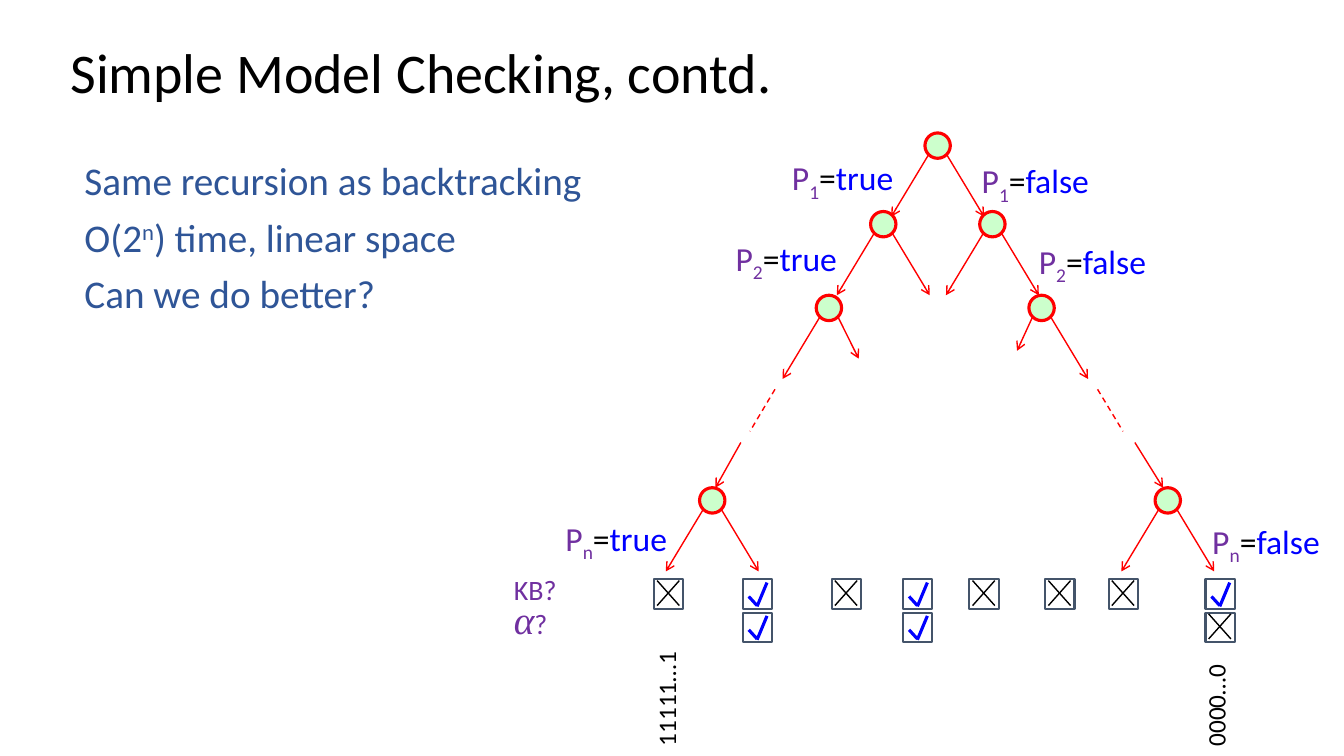
from dataclasses import dataclass

from lxml import etree
from pptx import Presentation
from pptx import util as u
from pptx.dml.color import RGBColor
from pptx.enum import dml, shapes, text
from pptx.oxml import ns


@dataclass(frozen=True)
class Theme:
    """Colours, fonts and type sizes of the slide."""
    black: str = "000000"
    body: str = "2F5597"
    red: str = "FF0000"
    green: str = "CCFFCC"
    violet: str = "7030A0"
    blue: str = "0000FF"
    slate: str = "44546A"
    font: str = "Calibri"
    math: str = "Times New Roman"
    title: int = 40
    large: int = 28
    label: int = 24
    key: int = 20
    code: int = 18


THEME = Theme()


def style(run, size, color, base=0, font=THEME.font):
    """Format one run; base is a baseline shift in percent."""
    run.font.size = u.Pt(size)
    run.font.name = font
    run.font.color.rgb = RGBColor.from_string(color)
    if base:
        run.font._element.set("baseline", str(base * 1000))


def write(para, parts, size):
    """Add runs given as (words, colour, baseline shift)."""
    for words, color, base in parts:
        run = para.add_run()
        run.text = words
        style(run, size, color, base)


def label(parent, box, parts, size):
    """Add a one-line text box that grows with its text."""
    area = parent.shapes.add_textbox(*map(u.Cm, box))
    frame = area.text_frame
    frame.word_wrap = False
    frame.auto_size = text.MSO_AUTO_SIZE.SHAPE_TO_FIT_TEXT
    write(frame.paragraphs[0], parts, size)
    return area


def line(parent, start, end, color, width=1, arrow=False, dash=False):
    """Draw a straight line, with an arrowhead or dashes if wanted."""
    link = parent.shapes.add_connector(
        shapes.MSO_CONNECTOR.STRAIGHT, *map(u.Cm, (*start, *end)))
    link.line.color.rgb = RGBColor.from_string(color)
    link.line.width = u.Pt(width)
    if dash:
        link.line.dash_style = dml.MSO_LINE.DASH
    props = link._element.spPr
    if arrow:
        etree.SubElement(props.find(ns.qn("a:ln")),
                         ns.qn("a:tailEnd")).set("type", "arrow")
    etree.SubElement(props, ns.qn("a:effectLst"))


def outline(parent, kind, box, color, width, fill=None):
    """Add a preset shape with an outline and an optional fill."""
    shape = parent.shapes.add_shape(kind, *map(u.Cm, box))
    shape.shadow.inherit = False
    shape.line.color.rgb = RGBColor.from_string(color)
    shape.line.width = u.Pt(width)
    if fill:
        shape.fill.solid()
        shape.fill.fore_color.rgb = RGBColor.from_string(fill)
    else:
        shape.fill.background()


def header(slide, box):
    """Place and format the title."""
    title = slide.shapes.title
    title.left, title.top, title.width, title.height = map(u.Cm, box)
    frame = title.text_frame
    frame.text = "Simple Model Checking, contd."
    frame.auto_size = text.MSO_AUTO_SIZE.NONE
    frame.vertical_anchor = text.MSO_ANCHOR.MIDDLE
    para = frame.paragraphs[0]
    para.alignment = text.PP_ALIGN.LEFT
    para.line_spacing = 0.9
    style(para.runs[0], THEME.title, THEME.black)


def points(slide, box):
    """Write the three statements on the left."""
    frame = slide.shapes.add_textbox(*map(u.Cm, box)).text_frame
    frame.word_wrap = True
    rows = [
        [("Same recursion as backtracking", 0)],
        [("O(2", 0), ("n", 30), (") time, linear space", 0)],
        [("Can we do better?", 0)],
    ]
    for i, row in enumerate(rows):
        para = frame.add_paragraph() if i else frame.paragraphs[0]
        para.line_spacing = 0.9
        para.space_before = u.Pt(10)
        write(para, [(words, THEME.body, base) for words, base in row],
              THEME.large)


def tree(slide, left, top):
    """Draw the search tree with its branch labels."""
    group = slide.shapes.add_group_shape()
    size, edge = 0.64, 0.23
    full = (1.17, 1.79)
    nodes = [
        (9.63, 0.32, full, full),
        (8.26, 2.3, full, full),
        (11.01, 2.3, full, full),
        (6.89, 4.41, full, (0.75, 1.28)),
        (12.25, 4.41, (0.62, 1.08), full),
        (3.95, 9.26, full, full),
        (15.43, 9.26, full, full),
    ]
    for x, y, *ends in nodes:
        x, y = left + x, top + y
        outline(group, shapes.MSO_SHAPE.OVAL,
                (x - size / 2, y - size / 2, size, size),
                THEME.red, 2.25, THEME.green)
        for side, (dx, dy) in zip((-1, 1), ends):
            line(group, (x + side * edge, y + edge),
                 (x + side * dx, y + dy), THEME.red, arrow=True)
    for x, end, dash in [(4.67, 4.03, False), (14.6, 15.31, False),
                         (5.53, 4.9, True), (13.66, 14.3, True)]:
        y, stop = (6.46, 7.52) if dash else (7.8, 8.94)
        line(group, (left + x, top + y), (left + end, top + stop),
             THEME.red, arrow=not dash, dash=dash)
    for sub, x, right, y in [("1", 5.71, 10.49, 0.49),
                             ("2", 4.29, 11.93, 2.52),
                             ("n", 0, 16.3, 9.57)]:
        for value, dx, dy, width in [("true", x, 0, 3.12),
                                     ("false", right, 0.07, 3.28)]:
            label(group, (left + dx, top + y + dy, width, 1.27),
                  [("P", THEME.violet, 0), (sub, THEME.violet, -25),
                   ("=", THEME.black, 0), (value, THEME.blue, 0)],
                  THEME.label)


def mark(slide, left, top, sign):
    """Draw a box with a cross (x) or a tick (v)."""
    group = slide.shapes.add_group_shape()
    outline(group, shapes.MSO_SHAPE.RECTANGLE, (left, top, 0.74, 0.74),
            THEME.slate, 1.5)
    if sign == "x":
        color, width = THEME.black, 1
        strokes = [(0.08, 0.03, 0.64, 0.66), (0.64, 0.03, 0.08, 0.66)]
    else:
        color, width = THEME.blue, 2.25
        strokes = [(0.15, 0.43, 0.36, 0.66), (0.36, 0.68, 0.61, 0.08)]
    for x, y, end, stop in strokes:
        line(group, (left + x, top + y), (left + end, top + stop),
             color, width)


def checks(slide, left, top):
    """Set out the rows of marks, their names and the model codes."""
    for x, y, width, code in [(2.54, 2.69, 3.1, "11111…1"),
                              (16.46, 2.77, 2.95, "0000…0")]:
        area = label(slide, (left + x, top + y, width, 1.02),
                     [(code, THEME.black, 0)], THEME.code)
        area.rotation = 270
    columns = [3.78, 6.02, 8.26, 10.06, 11.73, 13.64, 15.24, 17.68]
    for row, signs in enumerate(["xvxvxxxv", "-v-v---x"]):
        for x, sign in zip(columns, signs):
            if sign != "-":
                mark(slide, left + x, top + 0.3 + row * 0.84, sign)
    label(slide, (left, top, 1.6, 1.12),
          [("KB?", THEME.violet, 0)], THEME.key)
    area = label(slide, (left, top + 0.58, 1.37, 1.45),
                 [("α", THEME.violet, 0), ("?", THEME.violet, 0)], THEME.key)
    alpha = area.text_frame.paragraphs[0].runs[0]
    style(alpha, THEME.large, THEME.violet, font=THEME.math)
    alpha.font.italic = True


def main():
    """Build the slide and save it."""
    deck = Presentation()
    deck.slide_width, deck.slide_height = u.Cm(33.87), u.Cm(19.05)
    slide = deck.slides.add_slide(deck.slide_layouts[5])
    header(slide, (1.52, 1.02, 29.21, 1.75))
    points(slide, (1.88, 3.96, 17.15, 6.07))
    tree(slide, 14, 3.35)
    checks(slide, 12.7, 14.3)
    deck.save("out.pptx")


if __name__ == "__main__":
    main()
